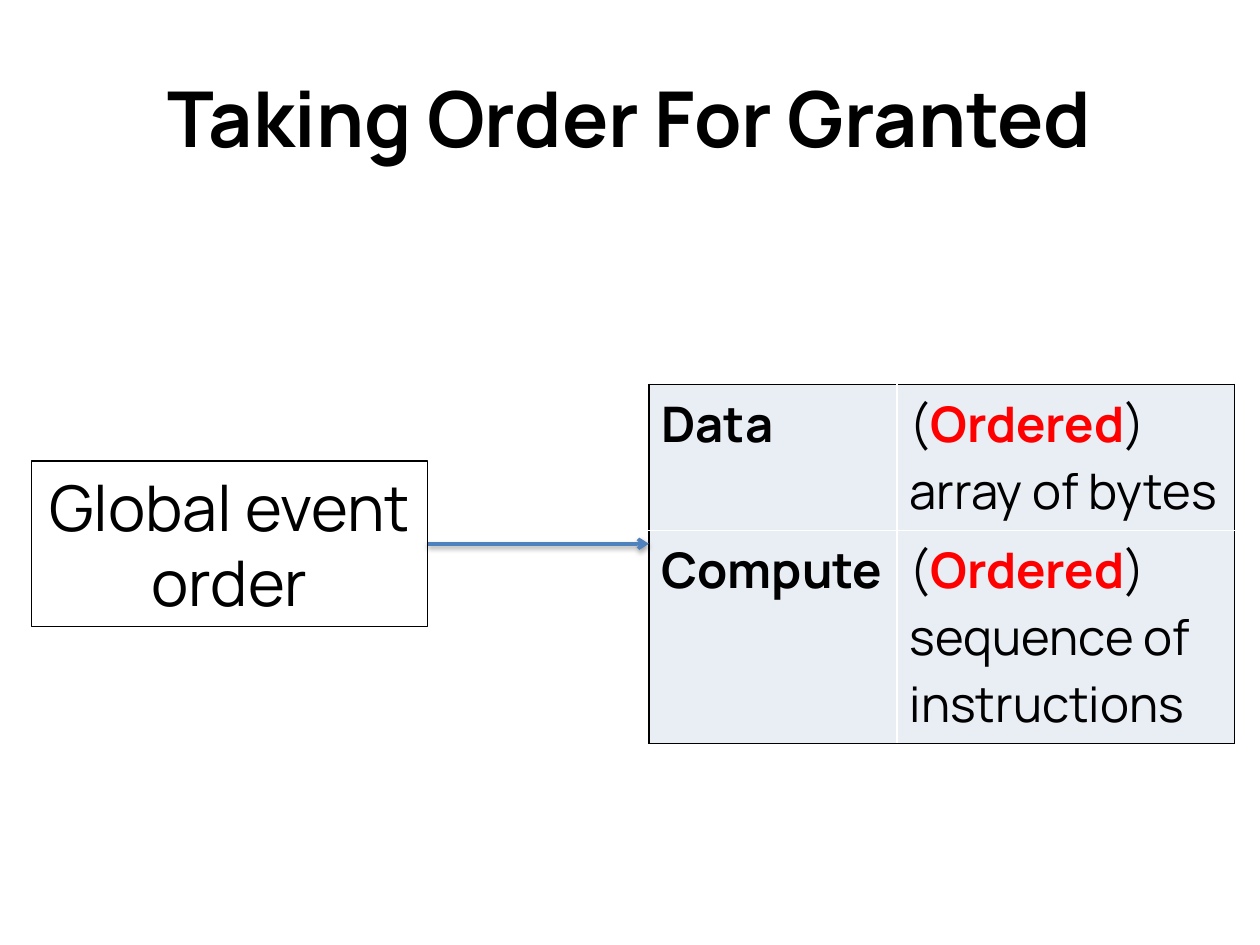
from lxml import etree
from pptx import Presentation
from pptx.dml.color import RGBColor
from pptx.enum.shapes import MSO_CONNECTOR, MSO_SHAPE
from pptx.enum.text import MSO_ANCHOR, MSO_AUTO_SIZE, PP_ALIGN
from pptx.oxml import parse_xml
from pptx.oxml.ns import nsdecls, qn
from pptx.util import Pt

CENTER = PP_ALIGN.CENTER
MIDDLE = MSO_ANCHOR.MIDDLE


class Theme:
    font = "Manrope"
    ink = "000000"
    paper = "FFFFFF"
    accent = "FF0000"
    arrow = "4F81BD"
    cell = "E9EDF4"
    title_size = 44
    box_size = 36
    table_size = 28


def style(font, size, bold=False):
    font.name = Theme.font
    font.size = Pt(size)
    font.bold = bold
    font.color.rgb = RGBColor.from_string(Theme.ink)


def add_border(cell, side, color):
    line = parse_xml(
        f'<a:{side} {nsdecls("a")} w="{Pt(1)}"><a:solidFill>'
        f'<a:srgbClr val="{color}"/></a:solidFill></a:{side}>'
    )
    properties = cell._tc.get_or_add_tcPr()
    # Borders come before the fill
    properties.insert(len(properties.findall("*")) - 1, line)


presentation = Presentation()
presentation.slide_width, presentation.slide_height = Pt(720), Pt(540)
slide = presentation.slides.add_slide(presentation.slide_layouts[5])

# Title
title = slide.shapes.title
title.left, title.top, title.width, title.height = Pt(36), Pt(21.6), Pt(648), Pt(90)
title.text_frame.text = "Taking Order For Granted"
title.text_frame.vertical_anchor = MIDDLE
paragraph = title.text_frame.paragraphs[0]
paragraph.alignment = CENTER
style(paragraph.font, Theme.title_size, bold=True)

# Table: a term and its ordered form, in runs of (text, highlighted)
rows = [
    ("Data", ["array of bytes"], True),
    ("Compute", [" sequence of instructions"], False),
]
table_left = 370.8
frame = slide.shapes.add_table(2, 2, Pt(table_left), Pt(219.6), Pt(334.8), Pt(181))
table = frame.table
table.first_row = table.horz_banding = False
for column, width in zip(table.columns, (141.84, 192.96)):
    column.width = Pt(width)
for row, height in zip(table.rows, (73.5, 107.5)):
    row.height = Pt(height)

for row_index, (term, description, breaks) in enumerate(rows):
    term_cell, form_cell = table.rows[row_index].cells
    term_cell.text = term
    style(term_cell.text_frame.paragraphs[0].font, Theme.table_size, bold=True)

    paragraph = form_cell.text_frame.paragraphs[0]
    style(paragraph.font, Theme.table_size)
    paragraph.add_run().text = "("
    highlight = paragraph.add_run()
    highlight.text = "Ordered"
    highlight.font.bold = True
    highlight.font.color.rgb = RGBColor.from_string(Theme.accent)
    paragraph.add_run().text = ")"
    if breaks:
        paragraph.add_line_break()
    paragraph.add_run().text = description[0]

    # Dark outer frame, white inner lines
    for column_index, cell in enumerate((term_cell, form_cell)):
        cell.fill.solid()
        cell.fill.fore_color.rgb = RGBColor.from_string(Theme.cell)
        outer_sides = ("lnL", "lnR")[column_index], ("lnT", "lnB")[row_index]
        for side in ("lnL", "lnR", "lnT", "lnB"):
            add_border(cell, side, Theme.ink if side in outer_sides else Theme.paper)

# Box for the global event order
box = slide.shapes.add_shape(MSO_SHAPE.RECTANGLE, Pt(18), Pt(263.5), Pt(226.5), Pt(94.5))
box.shadow.inherit = False
box.fill.background()
box.line.color.rgb = RGBColor.from_string(Theme.ink)
box.line.width = Pt(0.75)
text_frame = box.text_frame
text_frame.word_wrap = False
text_frame.auto_size = MSO_AUTO_SIZE.SHAPE_TO_FIT_TEXT
text_frame.vertical_anchor = MIDDLE
text_frame.text = "Global event\norder"
for paragraph in text_frame.paragraphs:
    paragraph.alignment = CENTER
    style(paragraph.font, Theme.box_size)

# Arrow from the box to the table, with a soft shadow below
arrow_y = box.top + box.height // 2
arrow = slide.shapes.add_connector(
    MSO_CONNECTOR.STRAIGHT, box.left + box.width, arrow_y, Pt(table_left), arrow_y
)
arrow.line.color.rgb = RGBColor.from_string(Theme.arrow)
arrow.line.width = Pt(2)
etree.SubElement(arrow.line._get_or_add_ln(), qn("a:tailEnd"), type="arrow")
arrow._element.spPr.append(parse_xml(
    f'<a:effectLst {nsdecls("a")}><a:outerShdw blurRad="{Pt(3.1)}" dist="{Pt(1.6)}" '
    f'dir="5400000" rotWithShape="0"><a:srgbClr val="{Theme.ink}">'
    '<a:alpha val="38000"/></a:srgbClr></a:outerShdw></a:effectLst>'
))

presentation.save("out.pptx")
